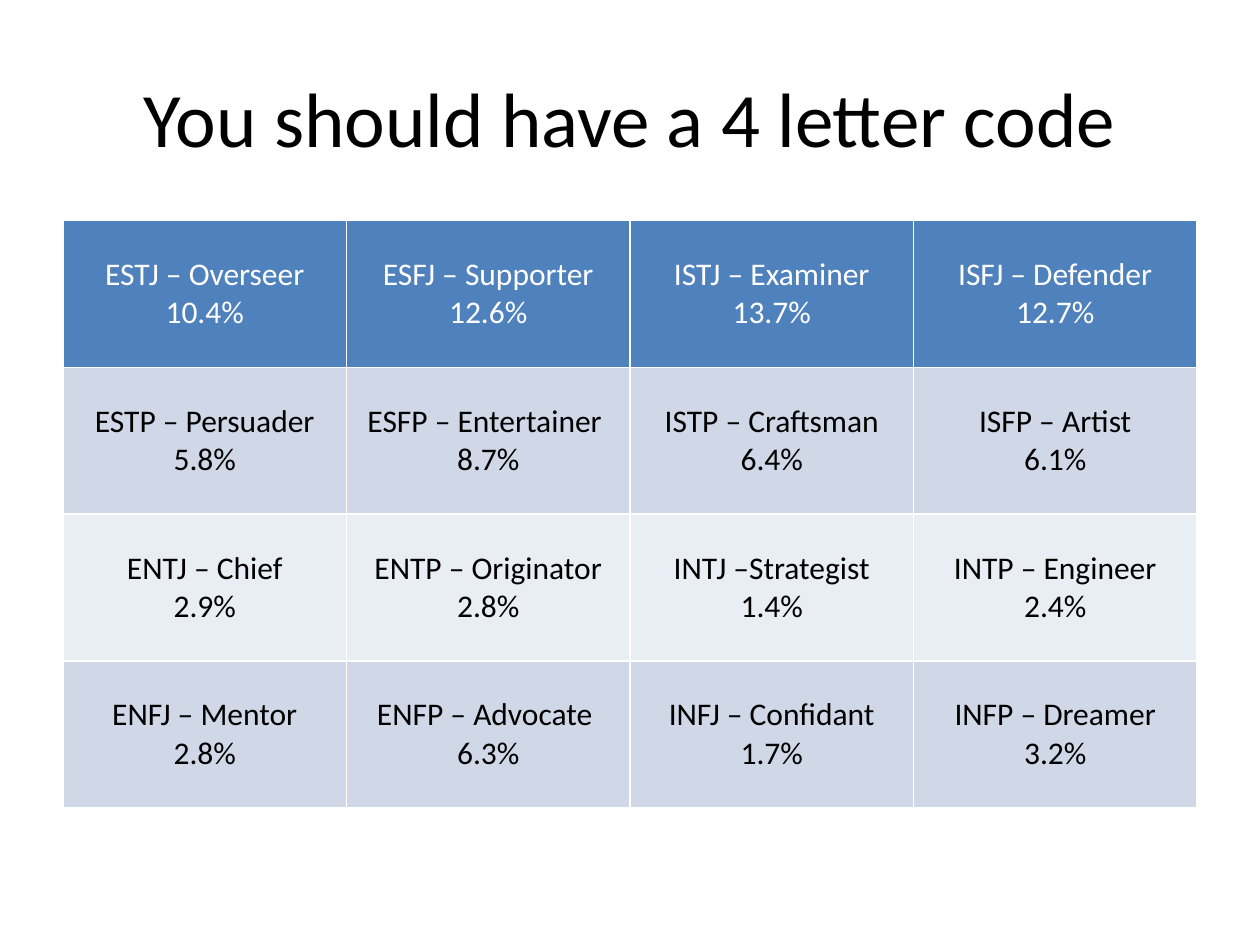
import lxml.etree
import pptx
import pptx.dml.color
import pptx.enum.text
import pptx.oxml.ns
import pptx.util

Inches = pptx.util.Inches
Pt = pptx.util.Pt

TITLE = "You should have a 4 letter code"
TYPES = [
    [("ESTJ – Overseer", "10.4%"), ("ESFJ – Supporter", "12.6%"),
     ("ISTJ – Examiner", "13.7%"), ("ISFJ – Defender", "12.7%")],
    [("ESTP – Persuader", "5.8%"), ("ESFP – Entertainer ", "8.7%"),
     ("ISTP – Craftsman", "6.4%"), ("ISFP – Artist", "6.1%")],
    [("ENTJ – Chief", "2.9%"), ("ENTP – Originator", "2.8%"),
     ("INTJ –Strategist", "1.4%"), ("INTP – Engineer", "2.4%")],
    [("ENFJ – Mentor", "2.8%"), ("ENFP – Advocate ", "6.3%"),
     ("INFJ – Confidant", "1.7%"), ("INFP – Dreamer", "3.2%")],
]
COLORS = {
    "black": "000000",
    "white": "FFFFFF",
    "header": "4F81BD",
    "dark_band": "D0D8E8",
    "light_band": "E9EDF4",
}
FONT = "Calibri"
LEFT, WIDTH = 0.5, 9
TABLE_TOP, TABLE_HEIGHT = 1.75, 4.66


def rgb(name):
    return pptx.dml.color.RGBColor.from_string(COLORS[name])


def write_lines(text_frame, lines, size, color):
    text_frame.word_wrap = True
    text_frame.text = "\n".join(lines)
    for paragraph in text_frame.paragraphs:
        paragraph.alignment = pptx.enum.text.PP_ALIGN.CENTER
        paragraph.font.name = FONT
        paragraph.font.size = Pt(size)
        paragraph.font.bold = False
        paragraph.font.color.rgb = rgb(color)


def add_borders(cell, color, width):
    properties = cell._tc.get_or_add_tcPr()
    qualified = pptx.oxml.ns.qn
    for side in ("lnL", "lnR", "lnT", "lnB"):
        line = lxml.etree.SubElement(properties, qualified(f"a:{side}"), w=str(Pt(width)))
        fill = lxml.etree.SubElement(line, qualified("a:solidFill"))
        lxml.etree.SubElement(fill, qualified("a:srgbClr"), val=COLORS[color])


def add_title(slide):
    shape = slide.shapes.add_textbox(Inches(LEFT), Inches(0.3), Inches(WIDTH), Inches(1.25))
    shape.text_frame.vertical_anchor = pptx.enum.text.MSO_ANCHOR.MIDDLE
    write_lines(shape.text_frame, [TITLE], 44, "black")


def add_type_table(slide):
    table = slide.shapes.add_table(
        len(TYPES), len(TYPES[0]),
        Inches(LEFT), Inches(TABLE_TOP), Inches(WIDTH), Inches(TABLE_HEIGHT),
    ).table
    for row_index, row in enumerate(TYPES):
        if row_index == 0:
            fill, text_color = "header", "white"
        else:
            fill, text_color = ("dark_band" if row_index % 2 else "light_band"), "black"
        for column_index, lines in enumerate(row):
            cell = table.cell(row_index, column_index)
            cell.vertical_anchor = pptx.enum.text.MSO_ANCHOR.MIDDLE
            add_borders(cell, "white", 1)
            cell.fill.solid()
            cell.fill.fore_color.rgb = rgb(fill)
            write_lines(cell.text_frame, lines, 18, text_color)


def main():
    presentation = pptx.Presentation()
    presentation.slide_width = Inches(10)
    presentation.slide_height = Inches(7.5)
    slide = presentation.slides.add_slide(presentation.slide_layouts[6])
    add_title(slide)
    add_type_table(slide)
    presentation.save("out.pptx")


if __name__ == "__main__":
    main()
